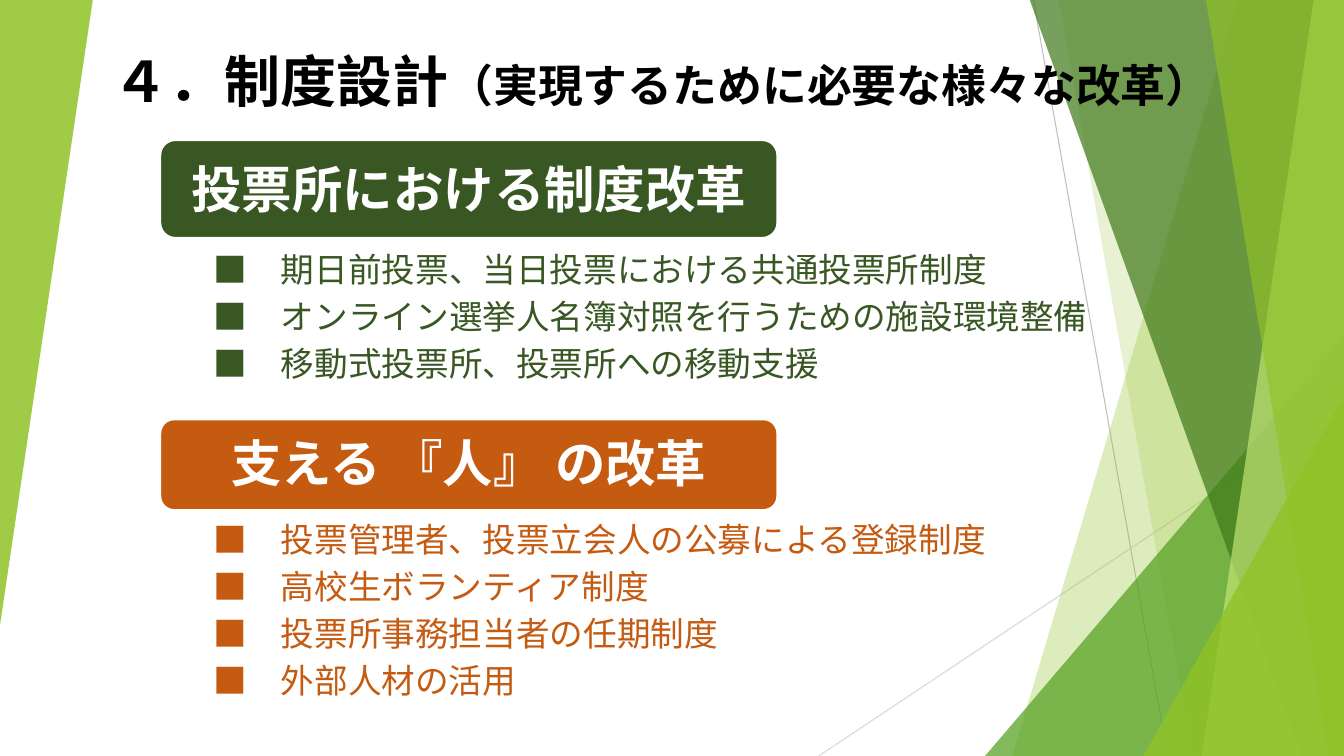
"""Build the slide on reforms of polling places and of the people behind them."""
import pptx
import pptx.dml.color
import pptx.enum.shapes
import pptx.enum.text
import pptx.oxml
import pptx.oxml.ns
import pptx.util

Inches = pptx.util.Inches
Pt = pptx.util.Pt
SHAPES = pptx.enum.shapes.MSO_SHAPE
ALIGN = pptx.enum.text.PP_ALIGN
ANCHOR = pptx.enum.text.MSO_ANCHOR

FONT = "Noto Sans CJK JP"
WIDTH, HEIGHT, TOP = 13.33, 7.5, -0.01
COLORS = {
    "black": "000000", "white": "FFFFFF", "green": "385723", "orange": "C55A11",
    "lime": "90C226", "leaf": "54A021", "forest": "3F7819", "pale": "C0E474",
    "gray": "BFBFBF", "light gray": "D9D9D9",
}
TITLE_BOX = (1.02, 0.49, 11.73, 0.72)
TITLE = [("４．制度設計", 40), ("（実現するために必要な様々な改革）", 32)]
SECTIONS = [
    {"heading": "投票所における制度改革", "color": "green",
     "banner": (1.57, 1.37, 6.16, 1.01), "banner_insets": (0.12, 0.12, 0.12, 0),
     "list": (1.84, 2.37, 9.11, 1.55),
     "items": ["期日前投票、当日投票における共通投票所制度",
               "オンライン選挙人名簿対照を行うための施設環境整備",
               "移動式投票所、投票所への移動支援"]},
    {"heading": "支える 『人』 の改革", "color": "orange",
     "banner": (1.57, 4.14, 6.16, 0.94), "banner_insets": (0.1, 0.08, 0.1, 0),
     "list": (1.84, 5.05, 8.87, 1.9),
     "items": ["投票管理者、投票立会人の公募による登録制度",
               "高校生ボランティア制度",
               "投票所事務担当者の任期制度",
               "外部人材の活用"]},
]
RAYS = [
    ((10.25, 0), (11.58, HEIGHT), "gray"),
    ((WIDTH, 4.03), (8.12, HEIGHT), "light gray"),
]
FACETS = [
    {"band": (12.28, 10.04), "color": "lime", "alpha": 30},
    {"band": (10.5, 11.83), "color": "lime", "alpha": 20},
    {"triangle": (9.77, 3.33, 3.56, 4.17), "color": "leaf", "alpha": 72},
    {"band": (10.21, 12.91), "color": "forest", "alpha": 70},
    {"band": (13.03, 11.92), "color": "pale", "alpha": 70},
    {"band": (11.96, 13.18), "color": "lime", "alpha": 65},
    {"triangle": (11.34, 3.93, 1.99, 3.57), "color": "lime", "alpha": 80},
    {"triangle": (0, 0, 0.92, 6.2), "color": "lime", "alpha": 85, "rotation": 180},
]


def rgb(name):
    return pptx.dml.color.RGBColor.from_string(COLORS[name])


def inches(values):
    return [Inches(value) for value in values]


def apply(target, formats):
    for name, value in formats.items():
        setattr(target, name, value)


def paint(shape, color):
    shape.shadow.inherit = False
    shape.fill.solid()
    shape.fill.fore_color.rgb = rgb(color)


def add_ray(slide, start, end, color):
    line = slide.shapes.add_connector(
        pptx.enum.shapes.MSO_CONNECTOR.STRAIGHT, *inches(start + end))
    line.line.color.rgb = rgb(color)
    line.line.width = Pt(0.75)
    pptx.oxml.ns.qn("a:effectLst")
    line.element.spPr.append(
        line.element.spPr.makeelement(pptx.oxml.ns.qn("a:effectLst"), {}))


def add_facet(slide, facet):
    if "band" in facet:
        upper, lower = facet["band"]
        corners = [(WIDTH, TOP), (WIDTH, HEIGHT), (lower, HEIGHT)]
        builder = slide.shapes.build_freeform(Inches(upper), Inches(TOP))
        builder.add_line_segments([inches(corner) for corner in corners], close=True)
        shape = builder.convert_to_shape()
    else:
        shape = slide.shapes.add_shape(
            SHAPES.ISOSCELES_TRIANGLE, *inches(facet["triangle"]))
        shape.adjustments[0] = 1
        shape.rotation = facet.get("rotation", 0)
    paint(shape, facet["color"])
    shape.line.fill.background()
    color = shape.element.spPr.find(".//" + pptx.oxml.ns.qn("a:srgbClr"))
    color.append(color.makeelement(
        pptx.oxml.ns.qn("a:alpha"), {"val": str(facet["alpha"] * 1000)}))


def set_frame(shape, insets, anchor=ANCHOR.TOP):
    sides = ("margin_left", "margin_top", "margin_right", "margin_bottom")
    apply(shape.text_frame, {"word_wrap": True, "vertical_anchor": anchor,
                             **dict(zip(sides, inches(insets)))})


def add_run(paragraph, text, size, color, bold=False):
    run = paragraph.add_run()
    run.text = text
    apply(run.font, {"size": Pt(size), "bold": bold, "name": FONT})
    run.font.color.rgb = rgb(color)
    properties = run.font._element
    properties.append(properties.makeelement(
        pptx.oxml.ns.qn("a:ea"), {"typeface": FONT}))


def add_title(slide):
    box = slide.shapes.add_textbox(*inches(TITLE_BOX))
    set_frame(box, (0.1, 0.05, 0.1, 0.05))
    box.text_frame.auto_size = pptx.enum.text.MSO_AUTO_SIZE.SHAPE_TO_FIT_TEXT
    paragraph = box.text_frame.paragraphs[0]
    paragraph.line_spacing = 0.9
    for text, size in TITLE:
        add_run(paragraph, text, size, "black", bold=True)


def add_section(slide, section):
    items = slide.shapes.add_textbox(*inches(section["list"]))
    set_frame(items, (0.28, 0.03, 0.1, 0.03))
    for index, item in enumerate(section["items"]):
        frame = items.text_frame
        paragraph = frame.add_paragraph() if index else frame.paragraphs[0]
        paragraph.line_spacing = Pt(33.6)
        add_run(paragraph, "■　" + item, 24, section["color"])

    banner = slide.shapes.add_shape(
        SHAPES.ROUNDED_RECTANGLE, *inches(section["banner"]))
    paint(banner, section["color"])
    banner.line.color.rgb = rgb("white")
    banner.line.width = Pt(4.25)
    set_frame(banner, section["banner_insets"], ANCHOR.MIDDLE)
    paragraph = banner.text_frame.paragraphs[0]
    apply(paragraph, {"alignment": ALIGN.CENTER, "line_spacing": Pt(33.6)})
    add_run(paragraph, section["heading"], 36, "white", bold=True)


def main():
    presentation = pptx.Presentation()
    apply(presentation, {"slide_width": Inches(WIDTH), "slide_height": Inches(HEIGHT)})
    slide = presentation.slides.add_slide(presentation.slide_layouts[6])
    for ray in RAYS:
        add_ray(slide, *ray)
    for facet in FACETS:
        add_facet(slide, facet)
    add_title(slide)
    for section in SECTIONS:
        add_section(slide, section)
    presentation.save("out.pptx")


if __name__ == "__main__":
    main()
